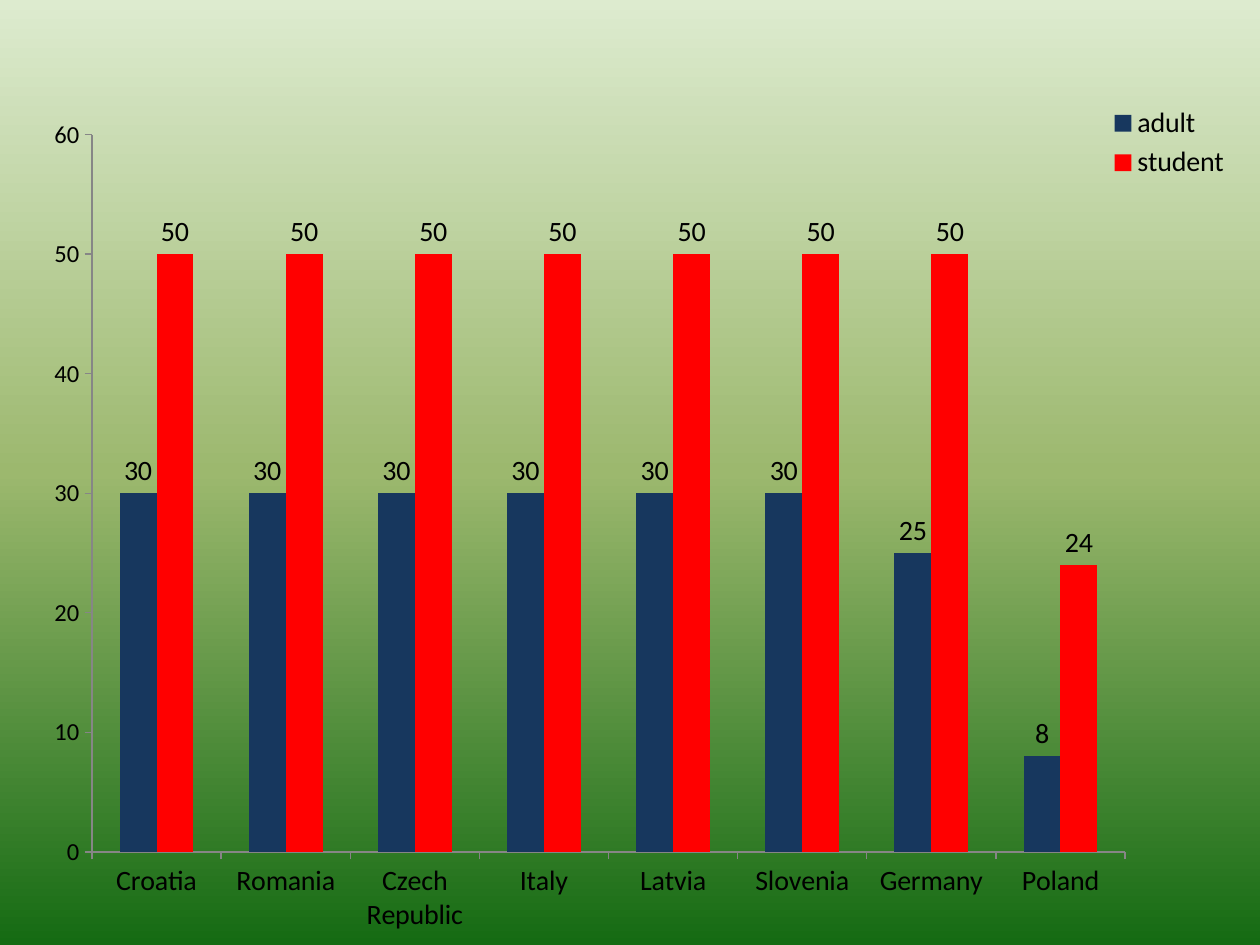
import copy

import lxml.etree
import pptx
import pptx.chart.data
import pptx.dml.color
import pptx.enum.chart
import pptx.oxml.ns
import pptx.util

Inches = pptx.util.Inches
Pt = pptx.util.Pt
RGBColor = pptx.dml.color.RGBColor

PALE_GREEN = RGBColor(0xDD, 0xEB, 0xCF)
MOSS_GREEN = RGBColor(0x9C, 0xB8, 0x6E)
DEEP_GREEN = RGBColor(0x15, 0x6B, 0x13)
NAVY = RGBColor(0x17, 0x37, 0x5E)
RED = RGBColor(0xFF, 0x00, 0x00)
BLACK = RGBColor(0x00, 0x00, 0x00)
GREY = RGBColor(0x86, 0x86, 0x86)

COUNTRIES = ["Croatia", "Romania", "Czech Republic", "Italy",
             "Latvia", "Slovenia", "Germany", "Poland"]
GROUPS = [
    ("adult", [30] * 6 + [25, 8], NAVY),
    ("student", [50] * 7 + [24], RED),
]


class SlideBuilder:
    font_name = "Calibri"
    label_size = Pt(16)
    scale_size = Pt(14)

    def __init__(self, deck):
        self.slide = deck.slides.add_slide(deck.slide_layouts[6])

    def gradient_background(self, colors):
        fill = self.slide.background.fill
        fill.gradient()
        fill.gradient_angle = 270
        stop_list = self.slide.element.xpath(".//p:bg//a:gsLst")[0]
        while len(stop_list) < len(colors):
            stop_list.append(copy.deepcopy(stop_list[0]))
        for index, (stop, color) in enumerate(zip(fill.gradient_stops, colors)):
            stop.position = index / (len(colors) - 1)
            stop.color.rgb = color

    def style_font(self, font, size):
        font.name = self.font_name
        font.size = size
        font.color.rgb = BLACK

    def style_axis(self, axis, size):
        axis.has_major_gridlines = False
        axis.major_tick_mark = pptx.enum.chart.XL_TICK_MARK.OUTSIDE
        axis.format.line.color.rgb = GREY
        axis.format.line.width = Pt(0.75)
        self.style_font(axis.tick_labels.font, size)

    def place(self, part, left, top, width, height, inner=False):
        qn = pptx.oxml.ns.qn
        for old in part.findall(qn("c:layout")):
            part.remove(old)
        layout = lxml.etree.Element(qn("c:layout"))
        manual = lxml.etree.SubElement(layout, qn("c:manualLayout"))
        settings = [("layoutTarget", "inner")] if inner else []
        settings += [("xMode", "edge"), ("yMode", "edge"),
                     ("x", left), ("y", top), ("w", width), ("h", height)]
        for name, value in settings:
            lxml.etree.SubElement(manual, qn("c:" + name)).set("val", str(value))
        position = part.find(qn("c:legendPos"))
        if position is None:
            part.insert(0, layout)
        else:
            position.addnext(layout)

    def column_chart(self, categories, groups, left, top, width, height):
        data = pptx.chart.data.CategoryChartData()
        data.categories = categories
        for name, values, color in groups:
            data.add_series(name, values)
        chart = self.slide.shapes.add_chart(
            pptx.enum.chart.XL_CHART_TYPE.COLUMN_CLUSTERED,
            left, top, width, height, data).chart
        chart.has_title = False
        self.style_font(chart.font, Pt(10))
        self.style_axis(chart.category_axis, self.label_size)
        self.style_axis(chart.value_axis, self.scale_size)
        chart.value_axis.minimum_scale = 0
        chart.value_axis.maximum_scale = 60
        chart.value_axis.major_unit = 10

        plot = chart.plots[0]
        plot.vary_by_categories = False
        plot.gap_width = 150
        plot.overlap = 0
        for series, (name, values, color) in zip(plot.series, groups):
            series.format.fill.solid()
            series.format.fill.fore_color.rgb = color
            labels = series.data_labels
            labels.show_value = True
            labels.position = pptx.enum.chart.XL_LABEL_POSITION.OUTSIDE_END
            self.style_font(labels.font, self.label_size)

        chart.has_legend = True
        chart.legend.position = pptx.enum.chart.XL_LEGEND_POSITION.RIGHT
        chart.legend.include_in_layout = False
        self.style_font(chart.legend.font, self.label_size)
        plot_area = chart.element.xpath(".//c:plotArea")[0]
        legend = chart.element.xpath(".//c:legend")[0]
        self.place(plot_area, 0.05, 0.04, 0.82, 0.85, inner=True)
        self.place(legend, 0.85, 0, 0.11, 0.1)


def main():
    deck = pptx.Presentation()
    deck.slide_width = Inches(10)
    deck.slide_height = Inches(7.5)
    builder = SlideBuilder(deck)
    builder.gradient_background([PALE_GREEN, MOSS_GREEN, DEEP_GREEN])
    builder.column_chart(COUNTRIES, GROUPS,
                         Inches(0.23), Inches(0.8), Inches(10), Inches(6.7))
    deck.save("out.pptx")


if __name__ == "__main__":
    main()
